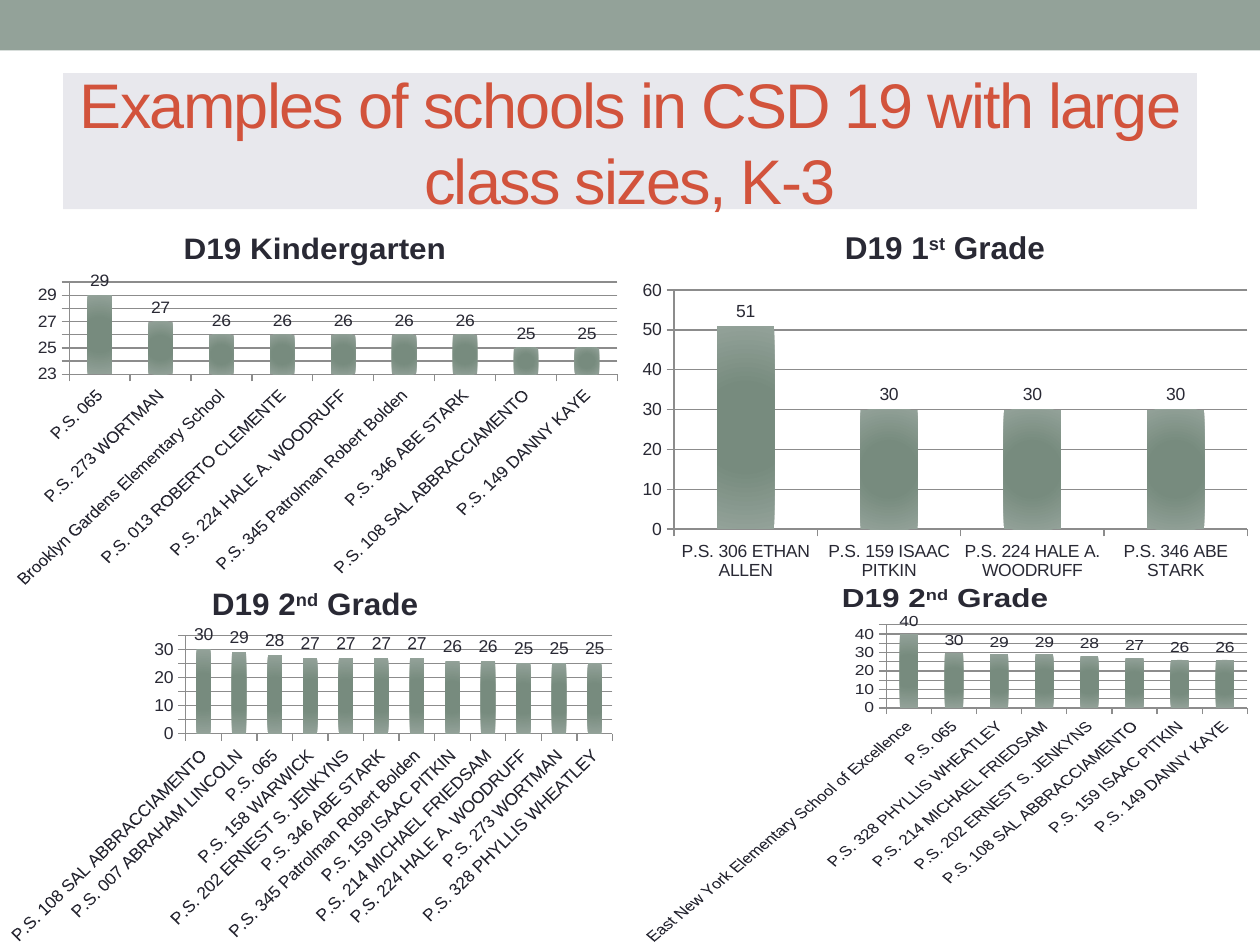
from lxml import etree
from pptx import Presentation
from pptx.chart.data import CategoryChartData
from pptx.dml.color import RGBColor
from pptx.enum.chart import XL_CHART_TYPE, XL_LABEL_POSITION, XL_TICK_MARK
from pptx.enum.shapes import MSO_SHAPE
from pptx.enum.text import MSO_ANCHOR, MSO_AUTO_SIZE, PP_ALIGN
from pptx.oxml import parse_xml
from pptx.util import Inches, Pt

HUES = {"sage": "93A299", "core": "778B7E", "pale": "E8E8ED",
        "rust": "D2533C", "ink": "292934", "grid": "8C8C8C"}
FONT = "Arial"
NS = "http://schemas.openxmlformats.org/drawingml/2006/main"
GLOW = f"""<a:gradFill xmlns:a="{NS}" rotWithShape="1"><a:gsLst>
<a:gs pos="0"><a:srgbClr val="{HUES['core']}"/></a:gs>
<a:gs pos="40000"><a:srgbClr val="{HUES['core']}"/></a:gs>
<a:gs pos="100000"><a:srgbClr val="{HUES['sage']}"/></a:gs></a:gsLst>
<a:path path="circle"><a:fillToRect l="50000" t="50000" r="50000" b="50000"/></a:path>
</a:gradFill>"""


def style(font, size, hue, bold=False):
    look = {"name": FONT, "size": Pt(size), "bold": bold}
    for key, value in look.items():
        setattr(font, key, value)
    font.color.rgb = RGBColor.from_string(HUES[hue])


def paint(shape, hue):
    shape.fill.solid()
    shape.fill.fore_color.rgb = RGBColor.from_string(HUES[hue])


prs = Presentation()
prs.slide_width, prs.slide_height = Inches(10), Inches(7.5)
slide = prs.slides.add_slide(prs.slide_layouts[5])

band = slide.shapes.add_shape(MSO_SHAPE.RECTANGLE, 0, 0, Inches(10), Inches(0.4))
band.shadow.inherit = False
band.line.fill.background()
paint(band, "sage")

title = slide.shapes.title
place = {"left": 0.5, "top": 0.58, "width": 9, "height": 1.08}
for key, value in place.items():
    setattr(title, key, Inches(value))
paint(title, "pale")
frame = title.text_frame
frame.text = "Examples of schools in CSD 19 with large class sizes, K-3"
frame.word_wrap = True
frame.auto_size = MSO_AUTO_SIZE.NONE
frame.vertical_anchor = MSO_ANCHOR.MIDDLE
frame.paragraphs[0].alignment = PP_ALIGN.CENTER
words = frame.paragraphs[0].runs[0]
style(words.font, 36, "rust")
words._r.get_or_add_rPr().set("spc", "-100")

# Heading parts (the second is raised), left, top, axis low, high and step, schools
CHARTS = [
    (["D19 Kindergarten"], 0, 1.67, 23, 30, 1, {
        "P.S. 065": 29, "P.S. 273 WORTMAN": 27,
        "Brooklyn Gardens Elementary School": 26,
        "P.S. 013 ROBERTO CLEMENTE": 26, "P.S. 224 HALE A. WOODRUFF": 26,
        "P.S. 345 Patrolman Robert Bolden": 26, "P.S. 346 ABE STARK": 26,
        "P.S. 108 SAL ABBRACCIAMENTO": 25, "P.S. 149 DANNY KAYE": 25}),
    (["D19 1", "st", " Grade"], 5, 1.67, 0, 60, 10, {
        "P.S. 306 ETHAN ALLEN": 51, "P.S. 159 ISAAC PITKIN": 30,
        "P.S. 224 HALE A. WOODRUFF": 30, "P.S. 346 ABE STARK": 30}),
    (["D19 2", "nd", " Grade"], 0, 4.5, 0, 35, 5, {
        "P.S. 108 SAL ABBRACCIAMENTO": 30, "P.S. 007 ABRAHAM LINCOLN": 29,
        "P.S. 065": 28, "P.S. 158 WARWICK": 27,
        "P.S. 202 ERNEST S. JENKYNS": 27, "P.S. 346 ABE STARK": 27,
        "P.S. 345 Patrolman Robert Bolden": 27, "P.S. 159 ISAAC PITKIN": 26,
        "P.S. 214 MICHAEL FRIEDSAM": 26, "P.S. 224 HALE A. WOODRUFF": 25,
        "P.S. 273 WORTMAN": 25, "P.S. 328 PHYLLIS WHEATLEY": 25}),
    (["D19 2", "nd", " Grade"], 5, 4.5, 0, 45, 5, {
        "East New York Elementary School of Excellence": 40, "P.S. 065": 30,
        "P.S. 328 PHYLLIS WHEATLEY": 29, "P.S. 214 MICHAEL FRIEDSAM": 29,
        "P.S. 202 ERNEST S. JENKYNS": 28, "P.S. 108 SAL ABBRACCIAMENTO": 27,
        "P.S. 159 ISAAC PITKIN": 26, "P.S. 149 DANNY KAYE": 26}),
]

for parts, left, top, low, high, step, schools in CHARTS:
    data = CategoryChartData(number_format="0")
    data.categories = list(schools)
    data.add_series("Series 1", list(schools.values()))
    chart = slide.shapes.add_chart(
        XL_CHART_TYPE.COLUMN_CLUSTERED, Inches(left), Inches(top),
        Inches(5), Inches(3), data).chart
    style(chart.font, 10, "ink")
    chart.has_legend = False

    head = chart.chart_title.text_frame.paragraphs[0]
    for spot, part in enumerate(parts):
        run = head.add_run()
        run.text = part
        style(run.font, 18, "ink", True)
        if spot == 1:
            run._r.get_or_add_rPr().set("baseline", "30000")
    chart.chart_title.include_in_layout = False

    scale = chart.value_axis
    limits = {"minimum_scale": low, "maximum_scale": high, "major_unit": step,
              "has_major_gridlines": True}
    for key, value in limits.items():
        setattr(scale, key, value)
    scale.tick_labels.number_format = "0"
    scale.tick_labels.number_format_is_linked = False
    for axis in (scale, chart.category_axis):
        axis.major_tick_mark = XL_TICK_MARK.OUTSIDE
    for part in (scale, chart.category_axis, scale.major_gridlines):
        part.format.line.color.rgb = RGBColor.from_string(HUES["grid"])
        part.format.line.width = Pt(0.75)

    plot = chart.plots[0]
    plot.gap_width = 150
    plot.vary_by_categories = False
    bars = plot.series[0]
    bars.invert_if_negative = False
    paint(bars.format, "sage")
    solid = bars._element.find(f".//{{{NS}}}solidFill")
    solid.getparent().replace(solid, parse_xml(GLOW))
    labels = bars.data_labels
    marks = {"show_value": True, "number_format": "0",
             "number_format_is_linked": False,
             "position": XL_LABEL_POSITION.OUTSIDE_END}
    for key, value in marks.items():
        setattr(labels, key, value)
    style(labels.font, 10, "ink")

prs.save("out.pptx")
